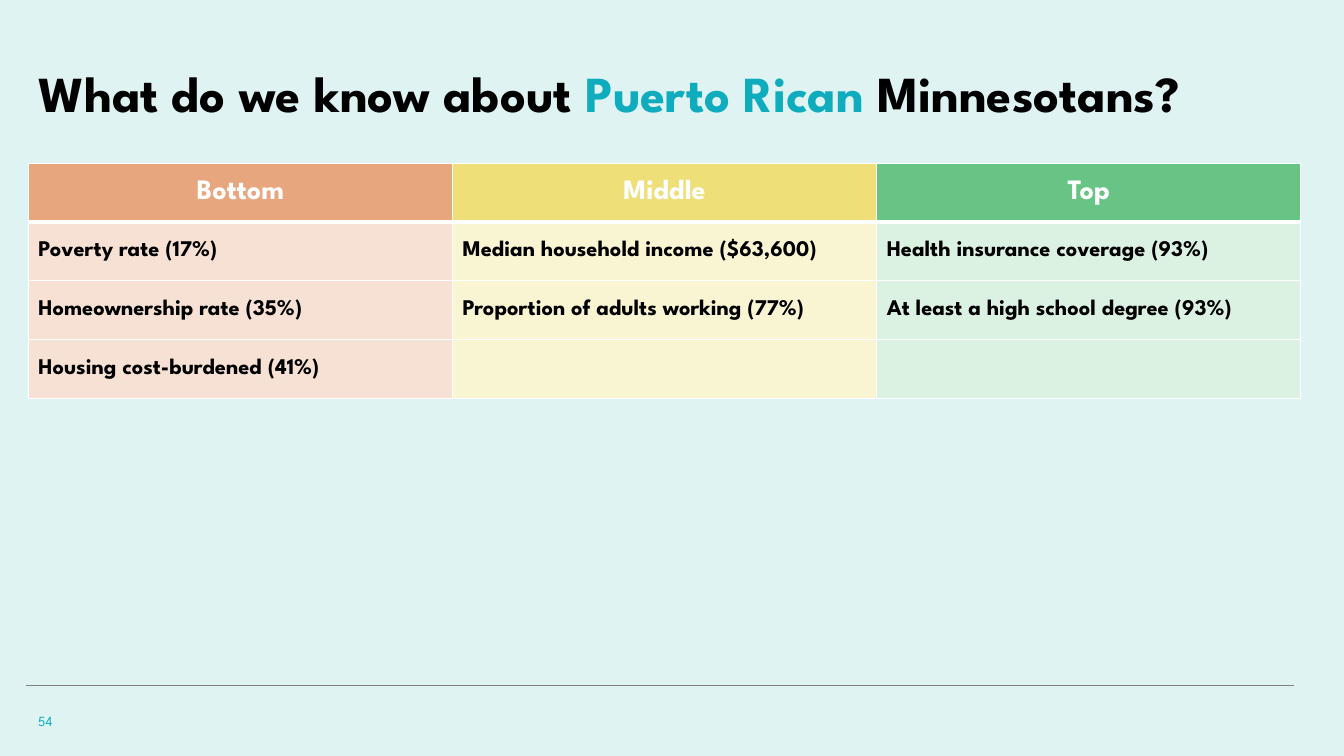
"""Build the slide on what is known about Puerto Rican Minnesotans."""
import pptx
import pptx.dml.color
import pptx.enum.shapes
import pptx.enum.text
import pptx.oxml.ns
import pptx.util
from lxml import etree

Pt = pptx.util.Pt
FONT = "League Spartan"
BACKGROUND, INK, ACCENT, WHITE, RULE = "DFF4F2", "000000", "0FACBD", "FFFFFF", "808080"
TITLE = [
    ("What do we know about ", INK),
    ("Puerto Rican", ACCENT),
    (" Minnesotans?", INK),
]
RANKINGS = [
    ("Bottom", "E8A67F", "F7E1D4",
     ["Poverty rate (17%)", "Homeownership rate (35%)", "Housing cost-burdened (41%)"]),
    ("Middle", "EEDF79", "F9F4D2",
     ["Median household income ($63,600)", "Proportion of adults working (77%)"]),
    ("Top", "68C484", "DBF1E2",
     ["Health insurance coverage (93%)", "At least a high school degree (93%)"]),
]
PAGE = "54"
LEFT, TABLE_TOP, COLUMN_WIDTH, ROW_HEIGHT = 20.2, 116.6, 303, 42
ROWS = 1 + max(len(measures) for *_, measures in RANKINGS)


def color(value):
    return pptx.dml.color.RGBColor.from_string(value)


def add_run(paragraph, text, size, ink, bold=True):
    run = paragraph.add_run()
    run.text = text
    run.font.name, run.font.size, run.font.bold = FONT, Pt(size), bold
    run.font.color.rgb = color(ink)


def add_text(slide, left, top, width, height, anchor):
    frame = slide.shapes.add_textbox(Pt(left), Pt(top), Pt(width), Pt(height)).text_frame
    frame.word_wrap = True
    frame.vertical_anchor = anchor
    return frame.paragraphs[0]


def add_borders(cell, top, bottom):
    properties = cell._tc.get_or_add_tcPr()
    for side, width in (("L", 1), ("R", 1), ("T", top), ("B", bottom)):
        border = etree.SubElement(properties, pptx.oxml.ns.qn(f"a:ln{side}"), w=str(Pt(width)))
        fill = etree.SubElement(border, pptx.oxml.ns.qn("a:solidFill"))
        etree.SubElement(fill, pptx.oxml.ns.qn("a:srgbClr"), val=WHITE)


def add_rankings(slide):
    table = slide.shapes.add_table(
        ROWS, len(RANKINGS), Pt(LEFT), Pt(TABLE_TOP),
        Pt(COLUMN_WIDTH * len(RANKINGS)), Pt(ROW_HEIGHT * ROWS)).table
    for row in table.rows:
        row.height = Pt(ROW_HEIGHT)
    for column, (heading, strong, pale, measures) in enumerate(RANKINGS):
        table.columns[column].width = Pt(COLUMN_WIDTH)
        for row in range(ROWS):
            cell = table.cell(row, column)
            cell.vertical_anchor = pptx.enum.text.MSO_ANCHOR.MIDDLE
            add_borders(cell, 3 if row == 1 else 1, 3 if row == 0 else 1)
            cell.fill.solid()
            cell.fill.fore_color.rgb = color(pale if row else strong)
            paragraph = cell.text_frame.paragraphs[0]
            if row == 0:
                paragraph.alignment = pptx.enum.text.PP_ALIGN.CENTER
                add_run(paragraph, heading, 20, WHITE)
            elif row <= len(measures):
                add_run(paragraph, measures[row - 1], 16, INK)


def main():
    deck = pptx.Presentation()
    deck.slide_width, deck.slide_height = Pt(960), Pt(540)
    slide = deck.slides.add_slide(deck.slide_layouts[6])
    slide.background.fill.solid()
    slide.background.fill.fore_color.rgb = color(BACKGROUND)

    footer_rule = slide.shapes.add_connector(
        pptx.enum.shapes.MSO_CONNECTOR.STRAIGHT, Pt(18.7), Pt(489.5), Pt(924.5), Pt(489.5))
    footer_rule.line.color.rgb = color(RULE)
    footer_rule.line.width = Pt(0.5)
    etree.SubElement(footer_rule._element.spPr, pptx.oxml.ns.qn("a:effectLst"))

    title = add_text(slide, LEFT, 28.8, 925, 62.6, pptx.enum.text.MSO_ANCHOR.BOTTOM)
    title.line_spacing = 0.9
    for text, ink in TITLE:
        add_run(title, text, 36, ink)

    add_rankings(slide)
    page = add_text(slide, LEFT, 500.4, 216, 28.8, pptx.enum.text.MSO_ANCHOR.MIDDLE)
    add_run(page, PAGE, 10, ACCENT, bold=False)
    deck.save("out.pptx")


if __name__ == "__main__":
    main()
